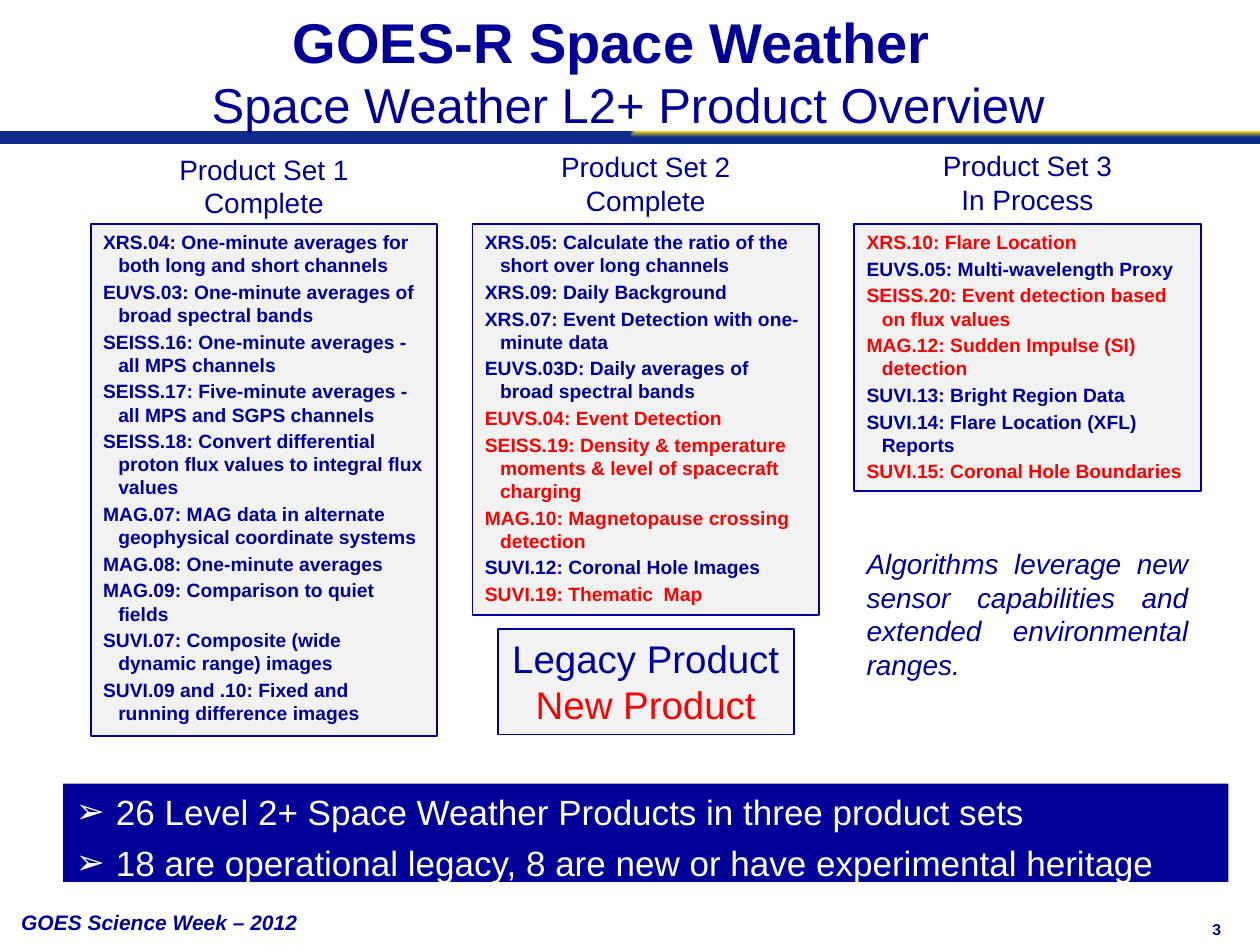
from lxml.etree import SubElement
from pptx import Presentation
from pptx.dml.color import RGBColor
from pptx.enum.shapes import MSO_SHAPE
from pptx.enum.text import MSO_ANCHOR, MSO_AUTO_SIZE, PP_ALIGN
from pptx.oxml.ns import qn
from pptx.util import Inches, Pt

NAVY = RGBColor(0x00, 0x00, 0x99)
RED = RGBColor(0xFF, 0x00, 0x00)
WHITE = RGBColor(0xFF, 0xFF, 0xFF)
PALE = RGBColor(0xF2, 0xF2, 0xF2)
GOLD = RGBColor(0xFE, 0xD9, 0x10)
BLUE = RGBColor(0x0D, 0x2B, 0x88)

SETS = [
    ("Product Set 1", "Complete", 1.16, 4.06, [
        (NAVY, "XRS.04: One-minute averages for both long and short channels"),
        (NAVY, "EUVS.03: One-minute averages of broad spectral bands"),
        (NAVY, "SEISS.16: One-minute averages - all MPS channels"),
        (NAVY, "SEISS.17: Five-minute averages - all MPS and SGPS channels"),
        (NAVY, "SEISS.18: Convert differential proton flux values to integral flux values"),
        (NAVY, "MAG.07: MAG data in alternate geophysical coordinate systems"),
        (NAVY, "MAG.08: One-minute averages"),
        (NAVY, "MAG.09: Comparison to quiet fields"),
        (NAVY, "SUVI.07: Composite (wide dynamic range) images"),
        (NAVY, "SUVI.09 and .10: Fixed and running difference images"),
    ]),
    ("Product Set 2", "Complete", 1.14, 3.1, [
        (NAVY, "XRS.05: Calculate the ratio of the short over long channels"),
        (NAVY, "XRS.09: Daily Background"),
        (NAVY, "XRS.07: Event Detection with one-minute data"),
        (NAVY, "EUVS.03D: Daily averages of broad spectral bands"),
        (RED, "EUVS.04: Event Detection"),
        (RED, "SEISS.19: Density & temperature moments & level of spacecraft charging"),
        (RED, "MAG.10: Magnetopause crossing detection"),
        (NAVY, "SUVI.12: Coronal Hole Images"),
        (RED, "SUVI.19: Thematic  Map"),
    ]),
    ("Product Set 3", "In Process", 1.13, 2.12, [
        (RED, "XRS.10: Flare Location"),
        (NAVY, "EUVS.05: Multi-wavelength Proxy"),
        (RED, "SEISS.20: Event detection based on flux values"),
        (RED, "MAG.12: Sudden Impulse (SI) detection"),
        (NAVY, "SUVI.13: Bright Region Data"),
        (NAVY, "SUVI.14: Flare Location (XFL) Reports"),
        (RED, "SUVI.15: Coronal Hole Boundaries"),
    ]),
]


def place(shape, box):
    shape.left, shape.top, shape.width, shape.height = map(Inches, box)


def style(para, size, color=NAVY, bold=False, italic=False):
    for run in para.runs:
        font = run.font
        font.name, font.size = "Arial", Pt(size)
        font.bold, font.italic = bold, italic
        font.color.rgb = color


def indent(para, size):
    props = para._p.get_or_add_pPr()
    props.set("marL", str(Inches(size)))
    props.set("indent", str(-Inches(size)))
    return props


def write(shape, lines, size, align=PP_ALIGN.LEFT, wrap=True, bold=False, italic=False):
    frame = shape.text_frame
    frame.word_wrap = wrap
    frame.vertical_anchor = MSO_ANCHOR.TOP
    frame.text = "\n".join(text for _, text in lines)
    for para, (color, _) in zip(frame.paragraphs, lines):
        para.alignment = align
        style(para, size, color, bold, italic)
    return frame.paragraphs


def label(slide, box, lines, size, **look):
    return write(slide.shapes.add_textbox(*map(Inches, box)), lines, size, **look)


def panel(slide, box, lines, size, **look):
    shape = slide.shapes.add_shape(MSO_SHAPE.RECTANGLE, *map(Inches, box))
    shape.shadow.inherit = False
    shape.fill.solid()
    shape.fill.fore_color.rgb = PALE
    shape.line.color.rgb = NAVY
    shape.line.width = Pt(1)
    return write(shape, lines, size, **look)


def header(slide, box):
    title = slide.shapes.title
    place(title, box)
    frame = title.text_frame
    frame.text = "GOES-R Space Weather\nSpace Weather L2+ Product Overview"
    frame.word_wrap = True
    frame.auto_size = MSO_AUTO_SIZE.NONE
    frame.vertical_anchor = MSO_ANCHOR.TOP
    frame.margin_left = frame.margin_right = Inches(0.05)
    first, second = frame.paragraphs
    first.alignment = second.alignment = PP_ALIGN.CENTER
    second._p.get_or_add_pPr().set("marL", str(Inches(0.26)))
    style(first, 32, bold=True)
    style(second, 28)


def stripe(slide, box):
    bar = slide.shapes.add_shape(MSO_SHAPE.RECTANGLE, *map(Inches, box))
    bar.shadow.inherit = False
    bar.line.fill.background()
    bar.fill.gradient()
    for stop, color, spot in zip(bar.fill.gradient_stops, (GOLD, BLUE), (0, 1)):
        stop.color.rgb = color
        stop.position = spot
    grad = bar.element.spPr.find(qn("a:gradFill"))
    grad.remove(grad.find(qn("a:lin")))
    route = SubElement(grad, qn("a:path"), path="rect")
    SubElement(route, qn("a:fillToRect"), l="100000", b="100000")
    slide.shapes._spTree.insert(2, bar.element)


def column(slide, box, name, state, top, items):
    left, _, width, _ = box
    label(slide, (left + (width - 1.56) / 2, top, 1.56, 0.64),
          [(NAVY, name), (NAVY, state)], 16, align=PP_ALIGN.CENTER, wrap=False)
    for spot, para in enumerate(panel(slide, box, items, 11, bold=True)):
        indent(para, 0.12)
        para.space_before = Pt(2 if spot else 0)


def banner(slide, box):
    body = slide.placeholders[1]
    place(body, box)
    body.fill.solid()
    body.fill.fore_color.rgb = NAVY
    body.text_frame.auto_size = MSO_AUTO_SIZE.NONE
    lines = [
        (WHITE, "26 Level 2+ Space Weather Products in three product sets"),
        (WHITE, "18 are operational legacy, 8 are new or have experimental heritage"),
    ]
    for spot, para in enumerate(write(body, lines, 20)):
        props = indent(para, 0.32)
        tint = SubElement(props, qn("a:buClr"))
        SubElement(tint, qn("a:srgbClr"), val=str(WHITE))
        SubElement(props, qn("a:buFont"), typeface="Arial")
        SubElement(props, qn("a:buChar"), char="➢")
        para.space_before = Pt(5.5 if spot else 0)


def footer(slide, top):
    label(slide, (0.07, top, 2.46, 0.3), [(NAVY, "GOES Science Week – 2012")], 12,
          wrap=False, bold=True, italic=True)
    label(slide, (9.27, top + 0.08, 0.52, 0.25), [(NAVY, "3")], 9,
          align=PP_ALIGN.RIGHT, bold=True)


def main():
    deck = Presentation()
    deck.slide_width, deck.slide_height = Inches(10), Inches(7.5)
    slide = deck.slides.add_slide(deck.slide_layouts[1])
    header(slide, (1.28, 0.01, 7.15, 1.11))
    stripe(slide, (0, 1.04, 10, 0.1))
    for spot, (name, state, top, height, items) in enumerate(SETS):
        column(slide, (0.72 + 3.03 * spot, 1.78, 2.75, height), name, state, top, items)
    panel(slide, (3.95, 4.99, 2.35, 0.84), [(NAVY, "Legacy Product"), (RED, "New Product")],
          22, align=PP_ALIGN.CENTER, wrap=False)
    label(slide, (6.78, 4.29, 2.75, 1.18),
          [(NAVY, "Algorithms leverage new sensor capabilities and extended environmental ranges.")],
          16, align=PP_ALIGN.JUSTIFY, italic=True)
    banner(slide, (0.5, 6.22, 9.25, 0.78))
    footer(slide, 7.17)
    deck.save("out.pptx")


if __name__ == "__main__":
    main()
